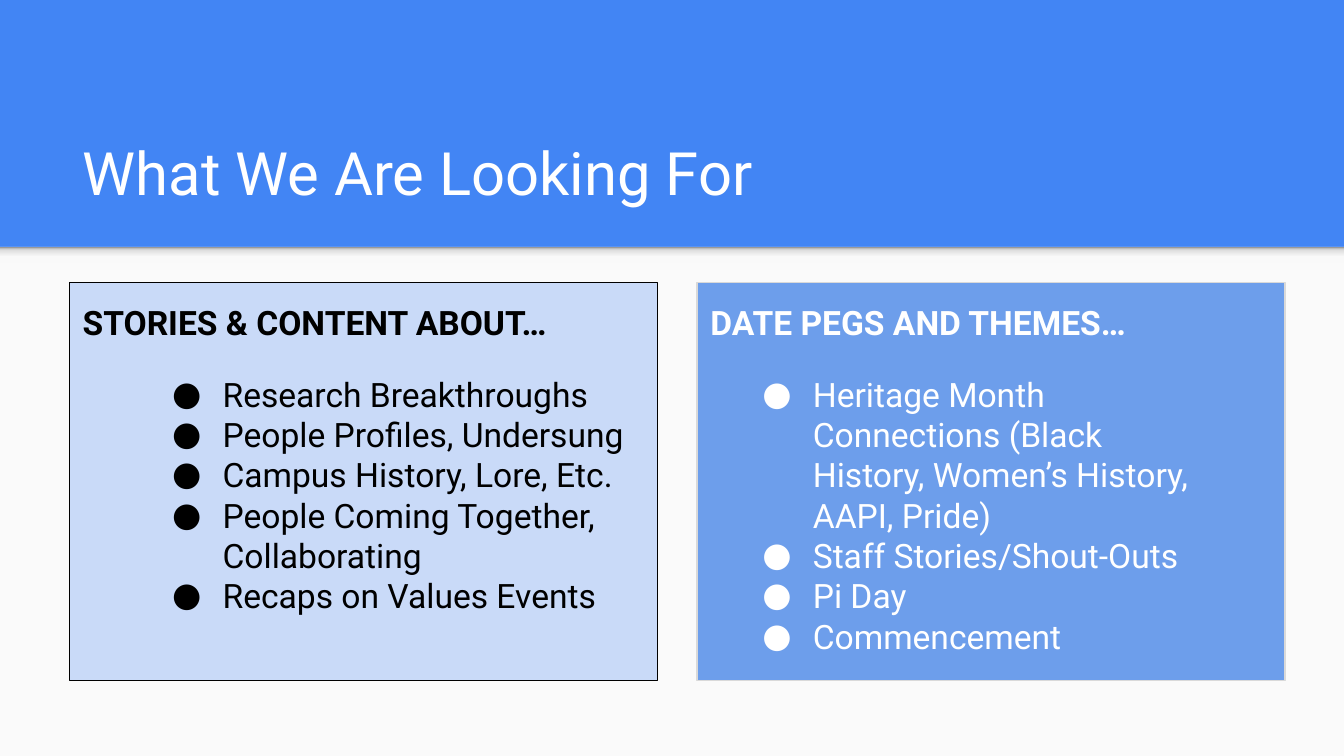
from lxml import etree
from pptx import Presentation
from pptx.dml.color import RGBColor as Color
from pptx.enum.shapes import MSO_SHAPE as Shape
from pptx.enum.text import MSO_ANCHOR as Anchor, PP_ALIGN as Align
from pptx.oxml.ns import qn
from pptx.util import Pt

COLORS = {
    "blue": "4285F4", "paper": "FAFAFA", "white": "FFFFFF", "black": "000000",
    "pale_blue": "C9DAF8", "mid_blue": "6D9EEB", "light_gray": "D9D9D9",
}
SHADOW_STOPS = [(0, "F9F9F9"), (36, "F9F9F9"), (80, "DEDEDE"), (100, "999999")]

WIDTH, HEIGHT = 720, 405
BAND_BOTTOM = 132.3
MARGIN = 37.2
PANEL_TOP, PANEL_WIDTH, PANEL_HEIGHT, PANEL_STEP = 151.3, 315, 213.3, 336.3
LIST_TOP, LIST_WIDTH, LIST_HEIGHT = 193, 265.5, 156

PANELS = [
    {
        "heading": "STORIES & CONTENT ABOUT…",
        "items": ["Research Breakthroughs", "People Profiles, Undersung",
                  "Campus History, Lore, Etc.",
                  "People Coming Together, Collaborating",
                  "Recaps on Values Events"],
        "fill": "pale_blue", "line": "black", "color": "black", "list_left": 76.2,
    },
    {
        "heading": "DATE PEGS AND THEMES…",
        "items": ["Heritage Month Connections (Black History, Women’s History, "
                  "AAPI, Pride)",
                  "Staff Stories/Shout-Outs", "Pi Day", "Commencement"],
        "fill": "mid_blue", "line": "light_gray", "color": "white", "list_left": 392.4,
    },
]


def rgb(name):
    return Color.from_string(COLORS[name])


def add_bullet(paragraph, color, left=36, hanging=27):
    properties = paragraph._p.get_or_add_pPr()
    properties.set("marL", str(Pt(left)))
    properties.set("indent", str(-Pt(hanging)))
    bullet_color = etree.SubElement(properties, qn("a:buClr"))
    etree.SubElement(bullet_color, qn("a:srgbClr"), val=COLORS[color])
    etree.SubElement(properties, qn("a:buFont"), typeface="Roboto")
    etree.SubElement(properties, qn("a:buChar"), char="●")


def write(frame, text, size=18, color="black", bold=False, bullet=False,
          line_spacing=None, space_after=None):
    """Fill the frame's empty first paragraph, or append a new one."""
    first = frame.paragraphs[0]
    paragraph = frame.add_paragraph() if first.runs else first
    paragraph.alignment = Align.LEFT
    if line_spacing:
        paragraph.line_spacing = line_spacing
    if space_after:
        paragraph.space_after = Pt(space_after)
    if bullet:
        add_bullet(paragraph, color)
    run = paragraph.add_run()
    run.text = text
    font = run.font
    font.name, font.size, font.bold = "Roboto", Pt(size), bold
    font.color.rgb = rgb(color)


class SlideBuilder:
    def __init__(self, slide, inset=7.2):
        self.slide = slide
        self.inset = inset

    def background(self, color):
        fill = self.slide.background.fill
        fill.solid()
        fill.fore_color.rgb = rgb(color)

    def prepare_frame(self, shape, anchor):
        frame = shape.text_frame
        frame.word_wrap = True
        frame.vertical_anchor = anchor
        frame.margin_left = frame.margin_right = Pt(self.inset)
        frame.margin_top = frame.margin_bottom = Pt(self.inset)
        return frame

    def rectangle(self, left, top, width, height, fill, line=None):
        shape = self.slide.shapes.add_shape(
            Shape.RECTANGLE, Pt(left), Pt(top), Pt(width), Pt(height))
        shape.shadow.inherit = False
        shape.fill.solid()
        shape.fill.fore_color.rgb = rgb(fill)
        if line:
            shape.line.color.rgb = rgb(line)
            shape.line.width = Pt(0.75)
        else:
            shape.line.fill.background()
        return shape

    def gradient_strip(self, left, top, width, height, stops):
        """Draw a strip whose stops run from bottom to top."""
        shape = self.rectangle(left, top, width, height, "paper")
        shape.fill.gradient()
        shape.fill.gradient_angle = 90
        stop_list = shape._element.spPr.find(".//" + qn("a:gsLst"))
        for stop in list(stop_list):
            stop_list.remove(stop)
        for percent, color in stops:
            stop = etree.SubElement(stop_list, qn("a:gs"), pos=str(percent * 1000))
            etree.SubElement(stop, qn("a:srgbClr"), val=color)

    def text_box(self, left, top, width, height, anchor=Anchor.TOP):
        shape = self.slide.shapes.add_textbox(
            Pt(left), Pt(top), Pt(width), Pt(height))
        return self.prepare_frame(shape, anchor)

    def panel(self, left, heading, fill, line, color):
        shape = self.rectangle(left, PANEL_TOP, PANEL_WIDTH, PANEL_HEIGHT, fill, line)
        frame = self.prepare_frame(shape, Anchor.TOP)
        write(frame, heading, color=color, bold=True,
              line_spacing=1.15, space_after=12)

    def bullet_list(self, left, items, color):
        frame = self.text_box(left, LIST_TOP, LIST_WIDTH, LIST_HEIGHT)
        for item in items:
            write(frame, item, color=color, bullet=True)


def main():
    presentation = Presentation()
    presentation.slide_width, presentation.slide_height = Pt(WIDTH), Pt(HEIGHT)
    slide = presentation.slides.add_slide(presentation.slide_layouts[6])
    builder = SlideBuilder(slide)

    builder.background("blue")
    builder.rectangle(0, BAND_BOTTOM, WIDTH, HEIGHT - BAND_BOTTOM, "paper")
    builder.gradient_strip(0, BAND_BOTTOM, WIDTH, 8.5, SHADOW_STOPS)

    title = builder.text_box(MARGIN, 58.2, 647, 60.4, Anchor.BOTTOM)
    write(title, "What We Are Looking For", size=32, color="white")

    for index, panel in enumerate(PANELS):
        builder.panel(MARGIN + index * PANEL_STEP, panel["heading"],
                      panel["fill"], panel["line"], panel["color"])
    for panel in PANELS:
        builder.bullet_list(panel["list_left"], panel["items"], panel["color"])

    presentation.save("out.pptx")


if __name__ == "__main__":
    main()
